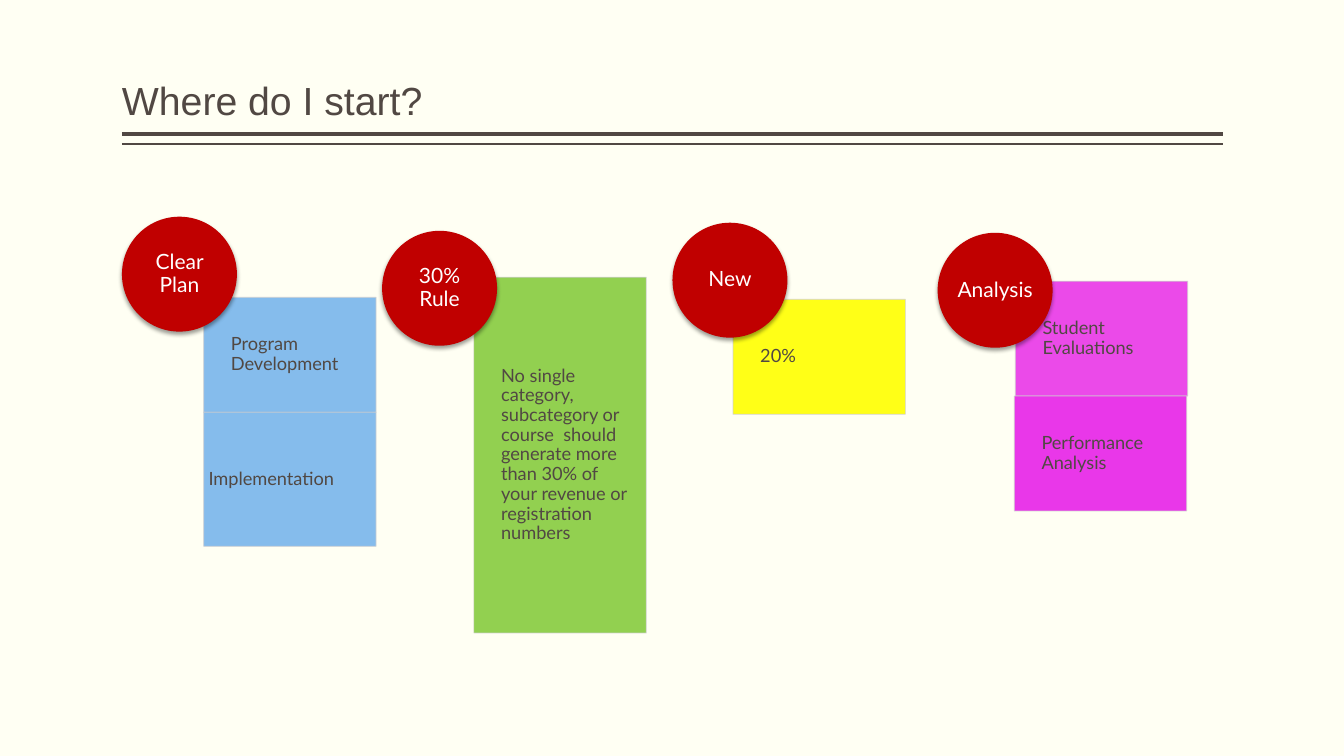
from pptx import Presentation
from pptx.dml.color import RGBColor
from pptx.enum.shapes import MSO_CONNECTOR, MSO_SHAPE
from pptx.enum.text import MSO_ANCHOR, MSO_AUTO_SIZE, PP_ALIGN
from pptx.oxml import parse_xml
from pptx.oxml.ns import nsdecls, qn
from pptx.util import Inches, Pt
from lxml.etree import SubElement

CREAM = RGBColor(0xFF, 0xFF, 0xF3)
BROWN = RGBColor(0x51, 0x48, 0x43)
WHITE = RGBColor(0xFF, 0xFF, 0xFF)
RED = RGBColor(0xC0, 0x00, 0x00)
GREY = RGBColor(0xD0, 0xCF, 0xCF)
BLUE = RGBColor(0x78, 0xB5, 0xEC)
GREEN = RGBColor(0x92, 0xD0, 0x50)
YELLOW = RGBColor(0xFF, 0xFF, 0x00)
MAGENTA = RGBColor(0xE9, 0x37, 0xE9)

TITLE = "Where do I start?"
RULE = ("No single category, subcategory or course  should generate more "
        "than 30% of your revenue or registration numbers")
LEFT, CENTER = PP_ALIGN.LEFT, PP_ALIGN.CENTER
INDENTED, FLUSH = (0.27, 0.1, 0.1, 0.1), (0, 0.1, 0.37, 0.1)

# heading, circle left and top, first box top, boxes
COLUMNS = [
    ("New", 6.67, 2.21, 2.97,
     [("20%", 7.27, 1.14, YELLOW, 90, LEFT, INDENTED)]),
    ("30% Rule", 3.79, 2.29, 2.75,
     [(RULE, 4.7, 3.53, GREEN, 100, LEFT, INDENTED)]),
    ("Clear Plan", 1.21, 2.15, 2.95,
     [("Program Development", 2.02, 1.14, BLUE, 90, LEFT, INDENTED),
      ("Implementation", 2.02, 1.33, BLUE, 90, CENTER, FLUSH)]),
    ("Analysis", 9.3, 2.31, 2.79,
     [("Student Evaluations", 10.07, 1.14, MAGENTA, 90, LEFT, INDENTED),
      ("Performance Analysis", 10.06, 1.14, MAGENTA, 100, LEFT, INDENTED)]),
]
MARGIN, CONTENT_W = 1.21, 10.92
CIRCLE, BOX_W = 1.14, 1.71
RULES = [(1.33, 3), (1.43, 1)]


def set_all(obj, values):
    for name, value in values.items():
        setattr(obj, name, value)


def set_text(sp, text, size, font, color, align, anchor, insets):
    tf = sp.text_frame
    tf.text = text
    left, top, right, bottom = map(Inches, insets)
    set_all(tf, dict(word_wrap=True, auto_size=MSO_AUTO_SIZE.NONE,
                     vertical_anchor=anchor, margin_left=left, margin_top=top,
                     margin_right=right, margin_bottom=bottom))
    p = tf.paragraphs[0]
    set_all(p, dict(alignment=align, line_spacing=0.9))
    set_all(p.runs[0].font, dict(size=Pt(size), name=font))
    p.runs[0].font.color.rgb = color


def set_alpha(fill_parent, percent):
    color = fill_parent.find(qn("a:solidFill"))[0]
    SubElement(color, qn("a:alpha")).set("val", str(percent * 1000))


def add_shape(s, kind, left, top, width, height, color):
    sp = s.shapes.add_shape(kind, *map(Inches, (left, top, width, height)))
    sp.shadow.inherit = False
    sp.fill.solid()
    sp.fill.fore_color.rgb = color
    return sp


def add_box(s, top, text, left, height, color, alpha, align, insets):
    sp = add_shape(s, MSO_SHAPE.RECTANGLE, left, top, BOX_W, height, color)
    sp.line.color.rgb = GREY
    sp.line.width = Pt(0.5)
    spPr = sp._element.spPr
    set_alpha(spPr.find(qn("a:ln")), 90)
    if alpha < 100:
        set_alpha(spPr, alpha)
    set_text(sp, text, 13, "Lato", BROWN, align, MSO_ANCHOR.MIDDLE, insets)


def add_circle(s, text, left, top):
    sp = add_shape(s, MSO_SHAPE.OVAL, left, top, CIRCLE, CIRCLE, RED)
    sp.line.fill.background()
    effects = sp._element.spPr.find(qn("a:effectLst"))
    effects.append(parse_xml(
        f'<a:outerShdw {nsdecls("a")} blurRad="{Pt(3.1)}" dist="{Pt(2)}" '
        'dir="5400000" rotWithShape="0"><a:srgbClr val="000000">'
        '<a:alpha val="38000"/></a:srgbClr></a:outerShdw>'))
    set_text(sp, text, 15, "Lato", WHITE, CENTER, MSO_ANCHOR.MIDDLE, (0,) * 4)


def main():
    prs = Presentation()
    set_all(prs, dict(slide_width=Inches(13.33), slide_height=Inches(7.5)))
    s = prs.slides.add_slide(prs.slide_layouts[5])
    s.background.fill.solid()
    s.background.fill.fore_color.rgb = CREAM

    for y, weight in RULES:
        line = s.shapes.add_connector(
            MSO_CONNECTOR.STRAIGHT,
            *map(Inches, (MARGIN, y, MARGIN + CONTENT_W, y)))
        line.line.color.rgb = BROWN
        line.line.width = Pt(weight)
        SubElement(line._element.spPr, qn("a:effectLst"))

    title = s.shapes.title
    set_all(title, dict(left=Inches(MARGIN), top=Inches(0.08),
                        width=Inches(CONTENT_W), height=Inches(1.2)))
    set_text(title, TITLE, 28, "Arial", BROWN, LEFT, MSO_ANCHOR.BOTTOM,
             (0, 0.05, 0, 0.05))

    for heading, left, top, box_top, boxes in COLUMNS:
        for box in boxes:
            add_box(s, box_top, *box)
            box_top += box[2]
        add_circle(s, heading, left, top)

    prs.save("out.pptx")


if __name__ == "__main__":
    main()
